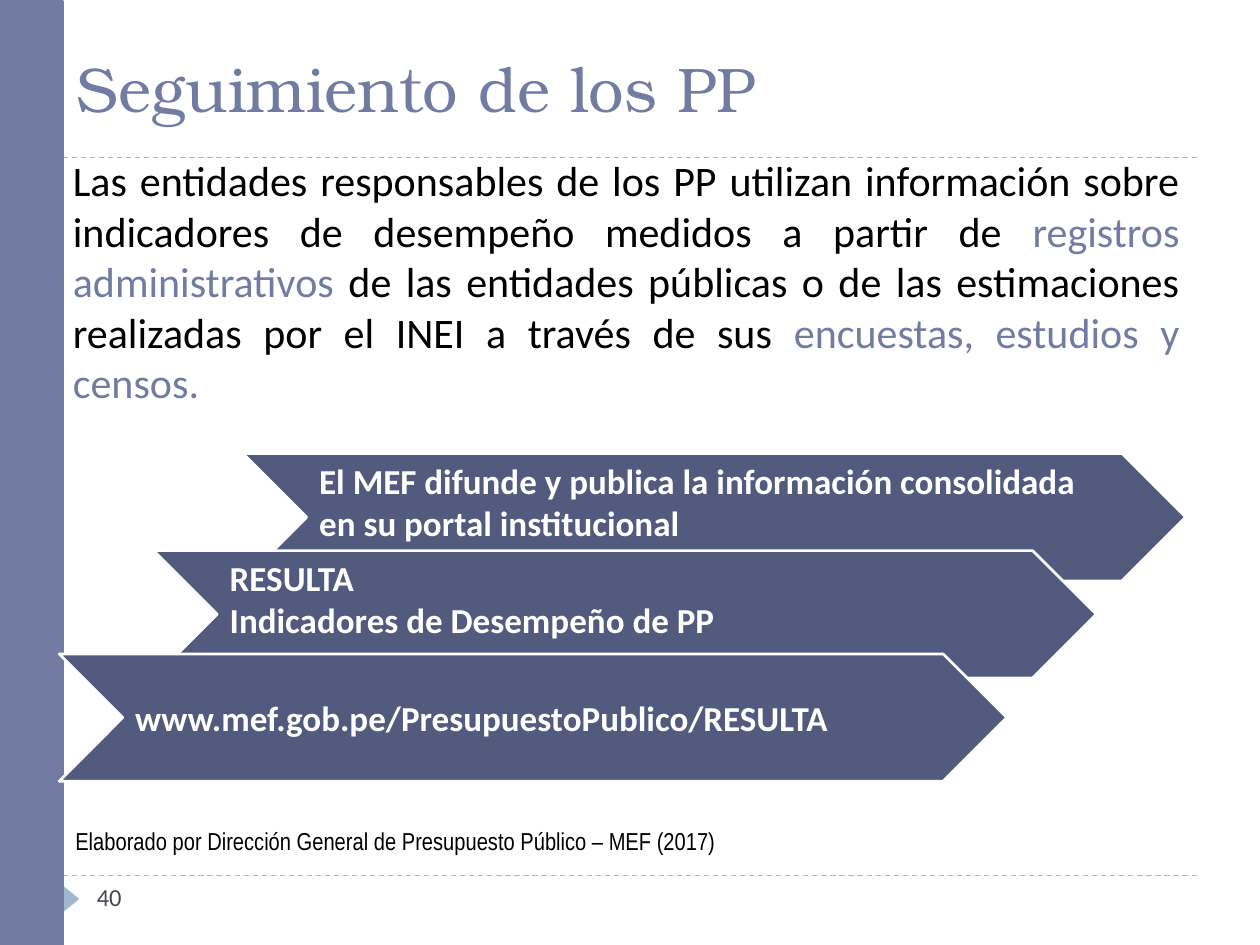
from dataclasses import dataclass

from lxml import etree
from pptx import Presentation
from pptx.dml.color import RGBColor
from pptx.enum.dml import MSO_LINE
from pptx.enum.shapes import MSO_CONNECTOR, MSO_SHAPE
from pptx.enum.text import MSO_ANCHOR, MSO_AUTO_SIZE, PP_ALIGN
from pptx.oxml.ns import qn
from pptx.util import Inches, Pt

STRAIGHT = MSO_CONNECTOR.STRAIGHT
RECTANGLE, TRIANGLE, CHEVRON = MSO_SHAPE.RECTANGLE, MSO_SHAPE.ISOSCELES_TRIANGLE, MSO_SHAPE.CHEVRON
TOP, MIDDLE, BOTTOM = MSO_ANCHOR.TOP, MSO_ANCHOR.MIDDLE, MSO_ANCHOR.BOTTOM
LEFT, JUSTIFY = PP_ALIGN.LEFT, PP_ALIGN.JUSTIFY
DASH = MSO_LINE.DASH
NO_AUTOFIT = MSO_AUTO_SIZE.NONE

COLORS = {
    "accent": "727CA3",
    "rule": "9FB8CD",
    "chevron": "525B7E",
    "number": "464653",
    "white": "FFFFFF",
    "black": "000000",
}


@dataclass
class Style:
    size: float
    color: str
    font: str = "Calibri"
    bold: bool = False


@dataclass
class Step:
    left: float
    top: float
    width: float
    lines: list[str]
    anchor: MSO_ANCHOR = TOP


STEPS = [
    Step(1.93, 3.6, 7.48,
         ["El MEF difunde y publica la información consolidada en su portal institucional"]),
    Step(1.22, 4.37, 7.48, ["RESULTA", "Indicadores de Desempeño de PP"]),
    Step(0.47, 5.19, 7.52, ["www.mef.gob.pe/PresupuestoPublico/RESULTA"], MIDDLE),
]
STEP_HEIGHT = 1.01

BODY_SPANS = [
    ("Las entidades responsables de los PP utilizan información sobre indicadores "
     "de desempeño medidos a partir de ", "black"),
    ("registros administrativos ", "accent"),
    ("de las entidades públicas o de las estimaciones realizadas por el INEI "
     "a través de sus ", "black"),
    ("encuestas, estudios y censos.", "accent"),
]


def rgb(name: str) -> RGBColor:
    return RGBColor.from_string(COLORS[name])


def format_span(span, style: Style) -> None:
    span.font.name = style.font
    span.font.size = Pt(style.size)
    span.font.bold = style.bold
    span.font.color.rgb = rgb(style.color)


def write_lines(shape, lines: list[str], style: Style, anchor: MSO_ANCHOR = TOP) -> None:
    frame = shape.text_frame
    frame.text = "\n".join(lines)
    frame.word_wrap = True
    frame.vertical_anchor = anchor
    for para in frame.paragraphs:
        para.alignment = LEFT
        for span in para.runs:
            format_span(span, style)


def add_box(page, left: float, top: float, width: float, height: float):
    box = page.shapes.add_textbox(Inches(left), Inches(top), Inches(width), Inches(height))
    box.text_frame.word_wrap = True
    return box


def add_filled(page, kind: MSO_SHAPE, left: float, top: float, width: float, height: float,
               fill: str, line: str | None = None):
    shape = page.shapes.add_shape(kind, Inches(left), Inches(top), Inches(width), Inches(height))
    shape.shadow.inherit = False
    shape.fill.solid()
    shape.fill.fore_color.rgb = rgb(fill)
    if line:
        shape.line.color.rgb = rgb(line)
        shape.line.width = Pt(1.5)
    else:
        shape.line.fill.background()
    return shape


def add_rule(page, top: float) -> None:
    rule = page.shapes.add_connector(STRAIGHT, Inches(0.5), Inches(top), Inches(9.5), Inches(top))
    rule.line.color.rgb = rgb("rule")
    rule.line.width = Pt(0.75)
    rule.line.dash_style = DASH
    etree.SubElement(rule._element.spPr, qn("a:effectLst"))


def add_step(page, step: Step) -> None:
    chevron = add_filled(page, CHEVRON, step.left, step.top, step.width, STEP_HEIGHT,
                         "chevron", "white")
    write_lines(chevron, step.lines, Style(20, "white", bold=True), step.anchor)


def add_body(page) -> None:
    box = add_box(page, 0.48, 1.15, 8.98, 2.59)
    box.text_frame.margin_top = Inches(0.08)
    para = box.text_frame.paragraphs[0]
    para.alignment = JUSTIFY
    for text, color in BODY_SPANS:
        span = para.add_run()
        span.text = text
        format_span(span, Style(24, color))


def main() -> None:
    deck = Presentation()
    deck.slide_width, deck.slide_height = Inches(10), Inches(7.5)
    page = deck.slides.add_slide(deck.slide_layouts[5])

    # Frame: dashed rules, page marker and side band
    for top in (6.95, 1.25):
        add_rule(page, top)
    marker = add_filled(page, TRIANGLE, 0.46, 7.07, 0.21, 0.13, "rule")
    marker.rotation = 90
    add_filled(page, RECTANGLE, 0, 0.01, 0.5, 7.49, "accent", "accent")
    write_lines(add_box(page, 0.67, 6.95, 2.17, 0.4), ["40"], Style(14, "number"))

    # Title
    title = page.shapes.title
    title.left, title.top = Inches(0.51), Inches(0.27)
    title.width, title.height = Inches(9), Inches(0.77)
    write_lines(title, ["Seguimiento de los PP"], Style(36, "accent", "TeX Gyre Bonum"), BOTTOM)
    title.text_frame.auto_size = NO_AUTOFIT

    # Body, overlapping chevrons and source note
    add_body(page)
    for step in STEPS:
        add_step(page, step)
    write_lines(add_box(page, 0.5, 6.51, 5.67, 0.34),
                ["Elaborado por Dirección General de Presupuesto Público – MEF (2017)"],
                Style(14, "black", "Arial Narrow"))

    deck.save("out.pptx")


if __name__ == "__main__":
    main()
